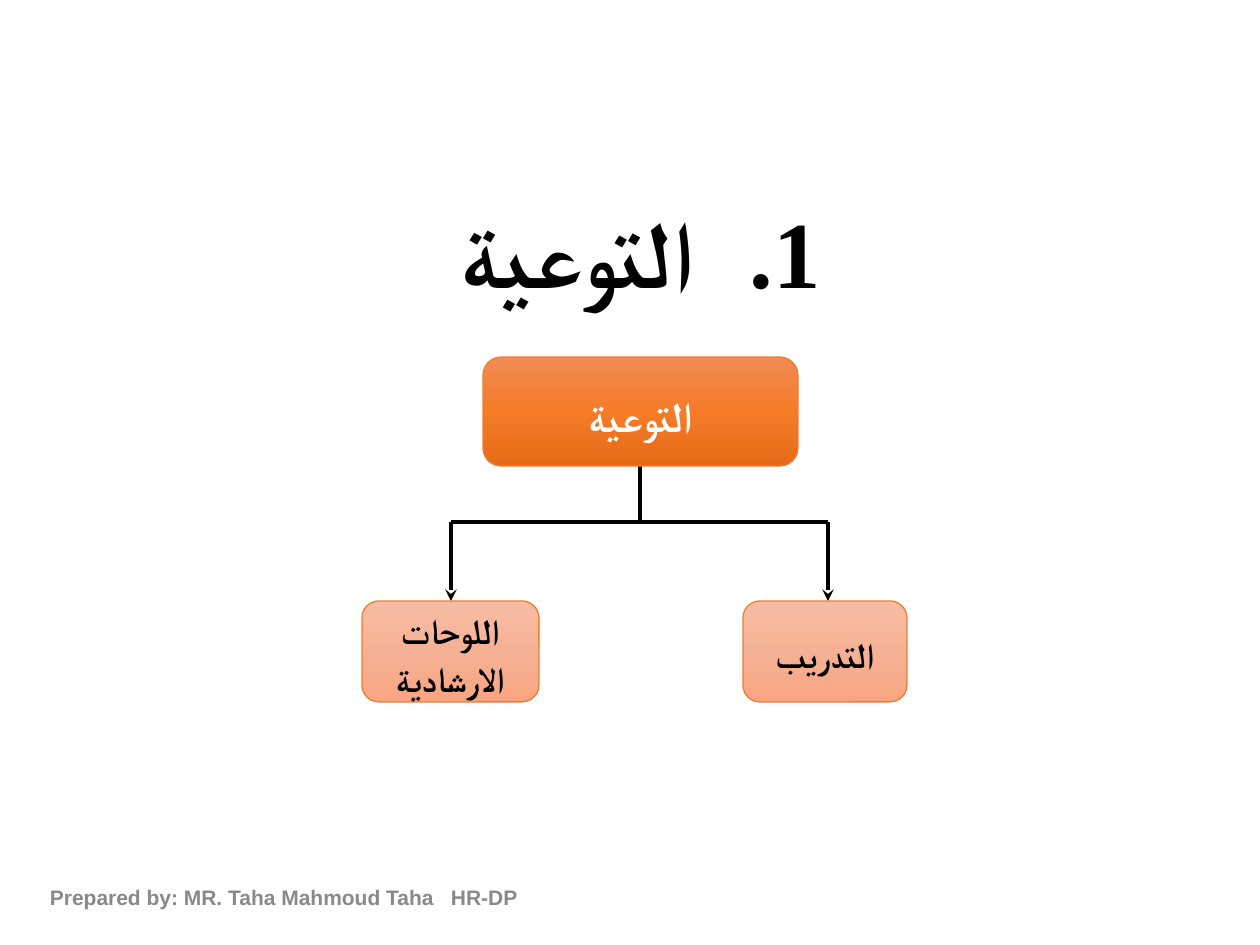
"""Build the awareness slide: a numbered title over a two-branch chart."""
from dataclasses import dataclass

from lxml.etree import SubElement
from pptx import Presentation
from pptx.dml.color import RGBColor
from pptx.enum.shapes import MSO_CONNECTOR, MSO_SHAPE
from pptx.enum.text import MSO_ANCHOR, MSO_AUTO_SIZE, PP_ALIGN
from pptx.oxml.ns import qn
from pptx.slide import Slide
from pptx.text.text import _Paragraph
from pptx.util import Pt

EMU_PER_PX = 914400 / 126
COLORS = {
    "black": "000000",
    "white": "FFFFFF",
    "footer": "898989",
    "border": "ED7D31",
}
GRADIENTS = {
    "root": ("F18C55", "F67B28", "E56B17"),
    "branch": ("F7BDA4", "F5B195", "F8A581"),
}


@dataclass
class Node:
    text: str
    left: int
    top: int
    width: int
    height: int
    gradient: str
    color: str
    size: int


@dataclass
class Line:
    start: tuple[int, int]
    end: tuple[int, int]
    arrow: bool = False


ROOT_CENTER, BAR_TOP, BRANCH_TOP = 640, 522, 601
BRANCH_CENTERS = (451, 828)
NODES = [
    Node("التوعية", 483, 357, 315, 109, "root", "white", 24),
    Node("التدريب", 743, BRANCH_TOP, 164, 101, "branch", "black", 20),
    Node("اللوحات الارشادية", 362, BRANCH_TOP, 177, 101, "branch", "black", 20),
]
LINES = [
    Line((ROOT_CENTER, 466), (ROOT_CENTER, BAR_TOP)),
    Line((BRANCH_CENTERS[0], BAR_TOP), (BRANCH_CENTERS[1], BAR_TOP)),
    *(Line((center, BAR_TOP), (center, BRANCH_TOP), True) for center in BRANCH_CENTERS),
]


def px(length: int) -> int:
    return round(length * EMU_PER_PX)


def rgb(name: str) -> RGBColor:
    return RGBColor.from_string(COLORS[name])


def format_paragraph(paragraph: _Paragraph, name: str, size: int, color: str) -> None:
    font = paragraph.font
    font.name, font.size, font.bold = name, Pt(size), True
    font.color.rgb = rgb(color)
    properties = paragraph._p.get_or_add_pPr().find(qn("a:defRPr"))
    SubElement(properties, qn("a:cs"), typeface=name)


def set_title(slide: Slide) -> None:
    title = slide.shapes.title
    title.left, title.top, title.width, title.height = map(px, (168, 199, 945, 116))
    frame = title.text_frame
    frame.text = "التوعية"
    frame.vertical_anchor = MSO_ANCHOR.BOTTOM
    frame.auto_size = MSO_AUTO_SIZE.NONE
    paragraph = frame.paragraphs[0]
    properties = paragraph._p.get_or_add_pPr()
    for key, value in {"marL": px(126), "indent": -px(126), "rtl": 1}.items():
        properties.set(key, str(value))
    bullet_color = SubElement(properties, qn("a:buClr"))
    SubElement(bullet_color, qn("a:srgbClr"), val=COLORS["black"])
    SubElement(properties, qn("a:buFont"), typeface="Arial")
    SubElement(properties, qn("a:buAutoNum"), type="arabicPeriod")
    paragraph.alignment = PP_ALIGN.CENTER
    paragraph.line_spacing = 0.9
    format_paragraph(paragraph, "Times New Roman", 54, "black")


def add_footer(slide: Slide) -> None:
    footer = slide.shapes.add_textbox(*map(px, (28, 872, 514, 50)))
    frame = footer.text_frame
    frame.word_wrap = True
    frame.vertical_anchor = MSO_ANCHOR.MIDDLE
    frame.margin_left = px(22)
    frame.text = "Prepared by: MR. Taha Mahmoud Taha\tHR-DP"
    paragraph = frame.paragraphs[0]
    tabs = SubElement(paragraph._p.get_or_add_pPr(), qn("a:tabLst"))
    SubElement(tabs, qn("a:tab"), pos=str(px(401)), algn="l")
    paragraph.alignment = PP_ALIGN.LEFT
    format_paragraph(paragraph, "Arial", 12, "footer")


def add_node(slide: Slide, node: Node) -> None:
    shape = slide.shapes.add_shape(
        MSO_SHAPE.ROUNDED_RECTANGLE,
        *map(px, (node.left, node.top, node.width, node.height)),
    )
    shape.shadow.inherit = False
    shape.line.color.rgb = rgb("border")
    shape.line.width = Pt(0.75)
    shape.fill.gradient()
    shape.fill.gradient_angle = 270
    stops = shape._element.spPr.find(qn("a:gradFill")).find(qn("a:gsLst"))
    stops.clear()
    for position, color in zip((0, 50000, 100000), GRADIENTS[node.gradient]):
        stop = SubElement(stops, qn("a:gs"), pos=str(position))
        SubElement(stop, qn("a:srgbClr"), val=color)
    frame = shape.text_frame
    frame.word_wrap = True
    frame.vertical_anchor = MSO_ANCHOR.MIDDLE
    frame.text = node.text
    paragraph = frame.paragraphs[0]
    paragraph.alignment = PP_ALIGN.CENTER
    paragraph.line_spacing = 1.15
    format_paragraph(paragraph, "Calibri", node.size, node.color)


def add_line(slide: Slide, line: Line) -> None:
    connector = slide.shapes.add_connector(
        MSO_CONNECTOR.STRAIGHT, *map(px, (*line.start, *line.end))
    )
    connector.line.color.rgb = rgb("black")
    connector.line.width = Pt(2.25)
    if line.arrow:
        SubElement(connector.line._get_or_add_ln(), qn("a:tailEnd"), type="stealth")
    SubElement(connector._element.spPr, qn("a:effectLst"))


def main() -> None:
    presentation = Presentation()
    presentation.slide_width, presentation.slide_height = px(1260), px(945)
    slide = presentation.slides.add_slide(presentation.slide_layouts[0])
    subtitle = slide.placeholders[1]._element
    subtitle.getparent().remove(subtitle)
    set_title(slide)
    add_footer(slide)
    for line in LINES:
        add_line(slide, line)
    for node in NODES:
        add_node(slide, node)
    presentation.save("out.pptx")


if __name__ == "__main__":
    main()
